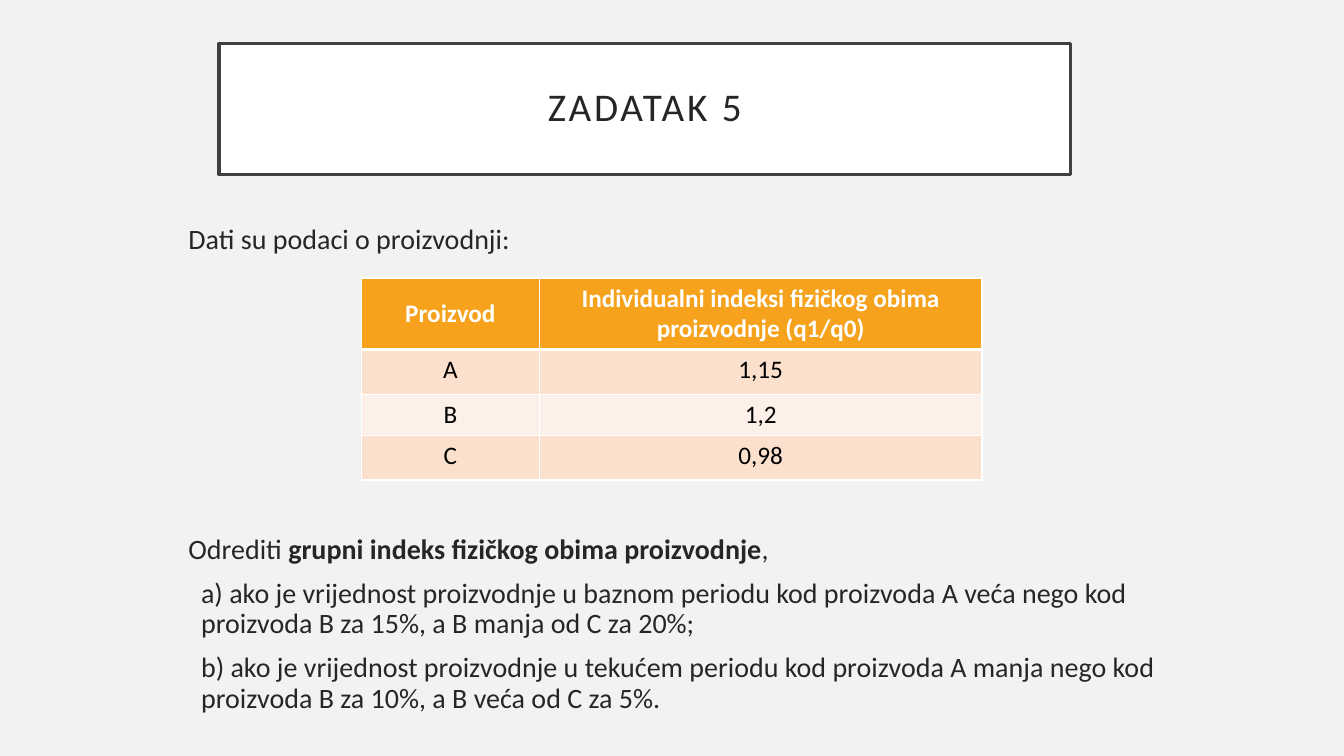
"""Build the exercise slide with a title, a table of indices and two tasks."""
import pptx
import pptx.dml.color
import pptx.enum.text
import pptx.oxml
import pptx.oxml.ns
import pptx.util

Pt = pptx.util.Pt
RGBColor = pptx.dml.color.RGBColor
ALIGN = pptx.enum.text.PP_ALIGN
ANCHOR = pptx.enum.text.MSO_ANCHOR

TITLE = "ZADATAK 5"
FIRST_GAP, LIST_GAP, TABLE_GAP = 10, 10, 199.8
BODY = [
    (FIRST_GAP, 0, [("Dati su podaci o proizvodnji:", False)]),
    (TABLE_GAP, 0, [("Odrediti ", False),
                    ("grupni indeks fizičkog obima proizvodnje", True), (",", False)]),
    (LIST_GAP, 9, [("a) ako je vrijednost proizvodnje u baznom periodu kod proizvoda A veća "
                    "nego kod proizvoda B za 15%, a B manja od C za 20%;", False)]),
    (LIST_GAP, 9, [("b) ako je vrijednost proizvodnje u tekućem periodu kod proizvoda A manja "
                    "nego kod proizvoda B za 10%, a B veća od C za 5%.", False)]),
]
TABLE = [
    ("Proizvod", "Individualni indeksi fizičkog obima proizvodnje (q1/q0)"),
    ("A", "1,15"),
    ("B", "1,2"),
    ("C", "0,98"),
]
COLUMN_WIDTHS = (127.4, 316)
ROW_HEIGHTS = (51.2, 32, 28.4, 32)

FONT = "Calibri"
BACKGROUND = RGBColor(0xF2, 0xF2, 0xF2)
WHITE = RGBColor(0xFF, 0xFF, 0xFF)
BLACK = RGBColor(0, 0, 0)
INK = RGBColor(0x26, 0x26, 0x26)
FRAME = RGBColor(0x40, 0x40, 0x40)
ORANGE = RGBColor(0xF6, 0xA2, 0x1D)
BANDS = (RGBColor(0xFD, 0xF0, 0xE8), RGBColor(0xFB, 0xE0, 0xCD))


def place(shape, left, top, width, height):
    """Move and size a shape, in points."""
    shape.left, shape.top = Pt(left), Pt(top)
    shape.width, shape.height = Pt(width), Pt(height)


def set_font(font, size, color, bold=None):
    """Set the slide's typeface with a size and colour."""
    font.name, font.size, font.bold = FONT, Pt(size), bold
    font.color.rgb = color


def add_borders(cell, top, bottom):
    """Draw white cell borders with the given top and bottom widths."""
    properties = cell._tc.get_or_add_tcPr()
    for side, width in (("L", 1), ("R", 1), ("T", top), ("B", bottom)):
        properties.append(pptx.oxml.parse_xml(
            f'<a:ln{side} {pptx.oxml.ns.nsdecls("a")} w="{Pt(width)}"><a:solidFill>'
            f'<a:srgbClr val="{WHITE}"/></a:solidFill></a:ln{side}>'))


def fill_title(shape):
    """Format the framed title."""
    place(shape, 156.4, 31, 608.4, 93.6)
    shape.fill.solid()
    shape.fill.fore_color.rgb = WHITE
    shape.line.color.rgb = FRAME
    shape.line.width = Pt(2.5)
    frame = shape.text_frame
    frame.text = TITLE
    frame.auto_size = pptx.enum.text.MSO_AUTO_SIZE.NONE
    frame.vertical_anchor = ANCHOR.MIDDLE
    frame.margin_left = frame.margin_right = Pt(14.4)
    frame.margin_top = frame.margin_bottom = Pt(14.4)
    paragraph = frame.paragraphs[0]
    paragraph.alignment = ALIGN.CENTER
    paragraph.line_spacing = 0.9
    set_font(paragraph.font, 28, INK)
    paragraph.runs[0].font._element.set("spc", "200")


def fill_body(shape):
    """Write the task text around the space for the table."""
    place(shape, 127.4, 157, 705.6, 383)
    frame = shape.text_frame
    frame.auto_size = pptx.enum.text.MSO_AUTO_SIZE.NONE
    for index, (gap, indent, runs) in enumerate(BODY):
        paragraph = frame.add_paragraph() if index else frame.paragraphs[0]
        paragraph.line_spacing = 0.9
        paragraph.space_before = Pt(gap)
        set_font(paragraph.font, 20, INK)
        properties = paragraph._p.get_or_add_pPr()
        properties.set("marL", str(Pt(indent)))
        properties.set("indent", "0")
        properties.insert_element_before(
            pptx.oxml.parse_xml(f'<a:buNone {pptx.oxml.ns.nsdecls("a")}/>'),
            "a:tabLst", "a:defRPr", "a:extLst")
        for text, bold in runs:
            run = paragraph.add_run()
            run.text = text
            run.font.bold = bold


def add_index_table(slide):
    """Add the table of individual indices."""
    table = slide.shapes.add_table(
        len(TABLE), len(COLUMN_WIDTHS), Pt(258), Pt(198.5),
        Pt(sum(COLUMN_WIDTHS)), Pt(sum(ROW_HEIGHTS))).table
    for column, width in zip(table.columns, COLUMN_WIDTHS):
        column.width = Pt(width)
    for row_index, (row, height) in enumerate(zip(table.rows, ROW_HEIGHTS)):
        row.height = Pt(height)
        header = row_index == 0
        for cell, text in zip(row.cells, TABLE[row_index]):
            cell.text = text
            cell.vertical_anchor = ANCHOR.MIDDLE if header else ANCHOR.TOP
            add_borders(cell, 3 if row_index == 1 else 1, 3 if header else 1)
            cell.fill.solid()
            cell.fill.fore_color.rgb = ORANGE if header else BANDS[row_index % 2]
            paragraph = cell.text_frame.paragraphs[0]
            paragraph.alignment = ALIGN.CENTER
            set_font(paragraph.font, 18, WHITE if header else BLACK, header)


def main():
    """Create and save the presentation."""
    presentation = pptx.Presentation()
    presentation.slide_width, presentation.slide_height = Pt(960), Pt(540)
    slide = presentation.slides.add_slide(presentation.slide_layouts[1])
    slide.background.fill.solid()
    slide.background.fill.fore_color.rgb = BACKGROUND
    fill_title(slide.shapes.title)
    fill_body(slide.placeholders[1])
    add_index_table(slide)
    presentation.save("out.pptx")


if __name__ == "__main__":
    main()
